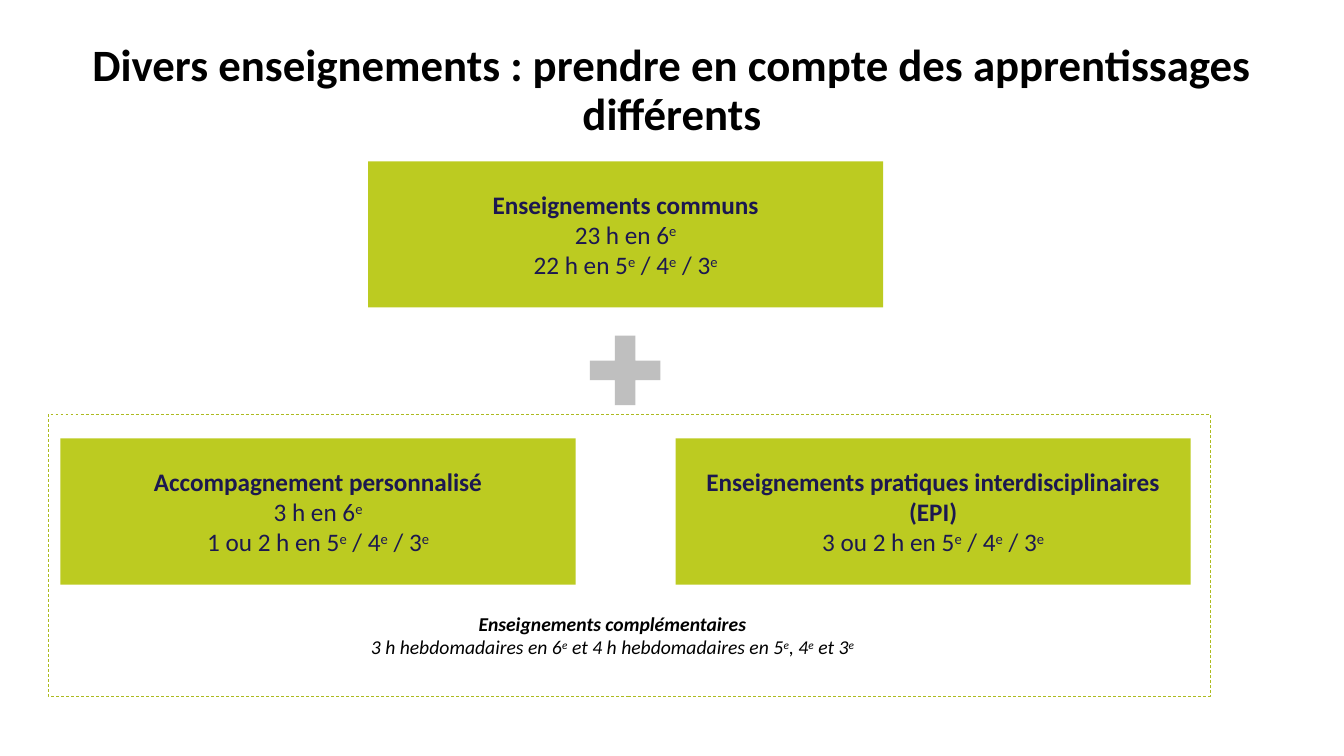
from dataclasses import dataclass

from pptx import Presentation
from pptx import util as u
from pptx.dml.color import RGBColor
from pptx.enum import dml, shapes, text


@dataclass(frozen=True)
class Theme:
    font: str = "Calibri"
    lime: str = "BCCB21"
    edge: str = "ADBB1F"
    grey: str = "BFBFBF"
    navy: str = "1C1850"
    black: str = "000000"
    title: int = 32
    body: int = 18
    note: int = 14


@dataclass(frozen=True)
class Area:
    left: float
    top: float
    width: float
    height: float

    def box(self) -> tuple:
        return tuple(u.Inches(v) for v in (self.left, self.top, self.width, self.height))


@dataclass(frozen=True)
class Card:
    left: float
    top: float
    lines: tuple


THEME = Theme()
WIDTH, HEIGHT = 13.33, 7.5
CARD_W, CARD_H = 5.11, 1.45
LOW = 4.35

# Text between carets is raised; the first line of each block is bold
CARDS = (
    Card(3.65, 1.6, ("Enseignements communs", "23 h en 6^e^",
                     "22 h en 5^e^ / 4^e^ / 3^e^")),
    Card(6.7, LOW, ("Enseignements pratiques interdisciplinaires (EPI)",
                    "3 ou 2 h en 5^e^ / 4^e^ / 3^e^")),
    Card(0.6, LOW, ("Accompagnement personnalisé", "3 h en 6^e^",
                    "1 ou 2 h en 5^e^ / 4^e^ / 3^e^")),
)
NOTE = ("Enseignements complémentaires",
        "3 h hebdomadaires en 6^e^ et 4 h hebdomadaires en 5^e^, 4^e^ et 3^e^")
TITLE = ("Divers enseignements : prendre en compte des apprentissages différents",)


def write(frame, lines: tuple, size: int, color: str,
          italic: bool = False, space: float = 1.0) -> None:
    frame.word_wrap = True
    for row, line in enumerate(lines):
        para = frame.paragraphs[0] if row == 0 else frame.add_paragraph()
        para.alignment = text.PP_ALIGN.CENTER
        para.line_spacing = space
        look = {"name": THEME.font, "size": u.Pt(size), "bold": row == 0, "italic": italic}
        for part, words in enumerate(line.split("^")):
            if not words:
                continue
            run = para.add_run()
            run.text = words
            for key, value in look.items():
                setattr(run.font, key, value)
            run.font.color.rgb = RGBColor.from_string(color)
            if part % 2:
                run.font._element.set("baseline", "30000")


def draw(slide, kind, area: Area, fill: str = ""):
    shape = slide.shapes.add_shape(kind, *area.box())
    shape.shadow.inherit = False
    shape.line.fill.background()
    if fill:
        shape.fill.solid()
        shape.fill.fore_color.rgb = RGBColor.from_string(fill)
    else:
        shape.fill.background()
    return shape


def label(slide, area: Area):
    return slide.shapes.add_textbox(*area.box()).text_frame


def main() -> None:
    deck = Presentation()
    deck.slide_width, deck.slide_height = u.Inches(WIDTH), u.Inches(HEIGHT)
    slide = deck.slides.add_slide(deck.slide_layouts[6])
    rect = shapes.MSO_SHAPE.RECTANGLE

    # Teaching blocks
    for card in CARDS:
        shape = draw(slide, rect, Area(card.left, card.top, CARD_W, CARD_H), THEME.lime)
        shape.text_frame.vertical_anchor = text.MSO_ANCHOR.MIDDLE
        write(shape.text_frame, card.lines, THEME.body, THEME.navy)

    # Plus sign
    plus = draw(slide, shapes.MSO_SHAPE.CROSS, Area(5.85, 3.33, 0.7, 0.69), THEME.grey)
    plus.adjustments[0] = 0.36

    # Note on the extra hours
    write(label(slide, Area(0.99, 6.02, 10.17, 0.7)), NOTE,
          THEME.note, THEME.black, italic=True)

    # Dashed frame
    border = draw(slide, rect, Area(0.48, 4.11, 11.52, 2.8)).line
    border.color.rgb = RGBColor.from_string(THEME.edge)
    border.width = u.Pt(0.5)
    border.dash_style = dml.MSO_LINE.DASH

    # Title
    write(label(slide, Area(0, 0.38, WIDTH, 0.91)), TITLE,
          THEME.title, THEME.black, space=0.9)

    deck.save("out.pptx")


if __name__ == "__main__":
    main()
